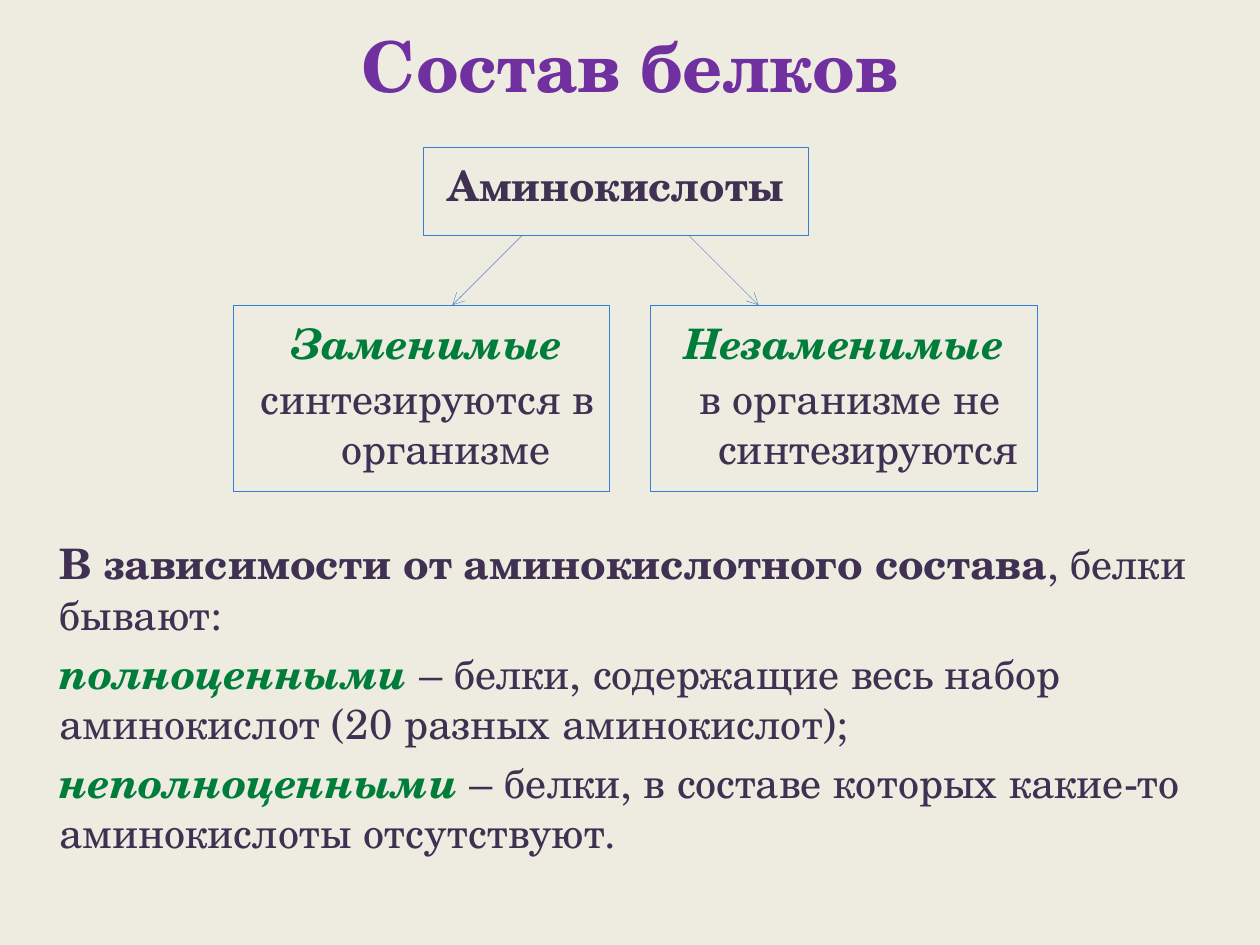
from lxml.etree import SubElement
from pptx import Presentation
from pptx.dml.color import RGBColor
from pptx.enum.shapes import MSO_CONNECTOR as Connector, MSO_SHAPE as Shape
from pptx.enum.text import MSO_ANCHOR as Anchor, PP_ALIGN as Align
from pptx.oxml.ns import qn
from pptx.util import Cm, Pt

FONT = "TeX Gyre Schola"
COLORS = {
    "background": "EEECE1",
    "title": "7030A0",
    "text": "403152",
    "term": "007E39",
    "border": "337ED9",
    "arrow": "4B7EBC",
}
# Run styles: size, colour, bold, italic
STYLES = {
    "title": (40, "title", True, False),
    "root": (23.8, "text", True, False),
    "strong": (24, "text", True, False),
    "plain": (24, "text", False, False),
    "term": (24, "term", True, True),
}

# Each paragraph is a list of (text, style) runs; places are left, top, width, height in cm
TITLE = [[("Состав белков", "title")]]
TITLE_PLACE = (1.27, -0.28, 22.86, 3.18)

ROOT = [[("Аминокислоты", "root")]]
ROOT_PLACE = (8.53, 2.97, 7.77, 1.78)

KINDS_TOP, KINDS_HEIGHT = 6.15, 3.76
KINDS = [  # left, width, term, description
    (4.7, 7.59, "Заменимые", "синтезируются в организме"),
    (13.11, 7.8, "Незаменимые ", "в организме не синтезируются"),
]
ARROWS = [(10.52, 9.12), (13.89, 15.29)]  # x at the root box, x at the kind box

BODY = [
    [("В зависимости от аминокислотного состава", "strong"), (", белки бывают:", "plain")],
    [("полноценными ", "term"),
     ("– белки, содержащие весь набор аминокислот (20 разных аминокислот);", "plain")],
    [("неполноценными ", "term"),
     ("– белки, в составе которых какие-то аминокислоты отсутствуют.", "plain")],
]
BODY_PLACE = (0, 10.72, 25.4, 7.01)
BODY_SPACES = (9, 4.8, 4.8)


def rgb(name):
    return RGBColor.from_string(COLORS[name])


def lengths(values):
    return [Cm(value) for value in values]


def write(shape, paragraphs, align, spaces=None, margin=0, indent=0):
    """Fill a shape with styled paragraphs; margin and indent are in cm."""
    frame = shape.text_frame
    frame.word_wrap = True
    for index, runs in enumerate(paragraphs):
        paragraph = frame.paragraphs[0] if index == 0 else frame.add_paragraph()
        paragraph.alignment = align
        if spaces:
            paragraph.space_before = Pt(spaces[index])
        properties = paragraph._p.get_or_add_pPr()
        properties.set("marL", str(Cm(margin)))
        properties.set("indent", str(Cm(indent)))
        for text, style in runs:
            run = paragraph.add_run()
            run.text = text
            size, color, bold, italic = STYLES[style]
            run.font.name, run.font.size = FONT, Pt(size)
            run.font.bold, run.font.italic = bold, italic
            run.font.color.rgb = rgb(color)


def add_box(slide, place, paragraphs, align):
    box = slide.shapes.add_shape(Shape.RECTANGLE, *lengths(place))
    box.shadow.inherit = False
    box.fill.background()
    box.line.color.rgb = rgb("border")
    box.line.width = Pt(0.25)
    frame = box.text_frame
    frame.vertical_anchor = Anchor.TOP
    frame.margin_left, frame.margin_top, frame.margin_right, frame.margin_bottom = lengths(
        (0.5, 0.25, 0.25, 0.13))
    write(box, paragraphs, align, [2.5] * len(paragraphs), 0.74, -0.74)


def add_arrow(slide, *ends):
    arrow = slide.shapes.add_connector(Connector.STRAIGHT, *lengths(ends))
    arrow.line.color.rgb = rgb("arrow")
    arrow.line.width = Pt(0.25)
    SubElement(arrow.line._get_or_add_ln(), qn("a:tailEnd"), type="arrow")
    SubElement(arrow._element.spPr, qn("a:effectLst"))


def main():
    presentation = Presentation()
    presentation.slide_width, presentation.slide_height = Cm(25.4), Cm(19.05)
    slide = presentation.slides.add_slide(presentation.slide_layouts[6])
    slide.background.fill.solid()
    slide.background.fill.fore_color.rgb = rgb("background")

    title = slide.shapes.add_textbox(*lengths(TITLE_PLACE))
    title.text_frame.vertical_anchor = Anchor.MIDDLE
    write(title, TITLE, Align.CENTER)

    body = slide.shapes.add_textbox(*lengths(BODY_PLACE))
    write(body, BODY, Align.LEFT, BODY_SPACES, margin=0.95)

    add_box(slide, ROOT_PLACE, ROOT, Align.LEFT)
    for left, width, term, description in KINDS:
        add_box(slide, (left, KINDS_TOP, width, KINDS_HEIGHT),
                [[(term, "term")], [(description, "plain")]], Align.CENTER)

    root_bottom = ROOT_PLACE[1] + ROOT_PLACE[3]
    for start, end in ARROWS:
        add_arrow(slide, start, root_bottom, end, KINDS_TOP)

    presentation.save("out.pptx")


if __name__ == "__main__":
    main()
